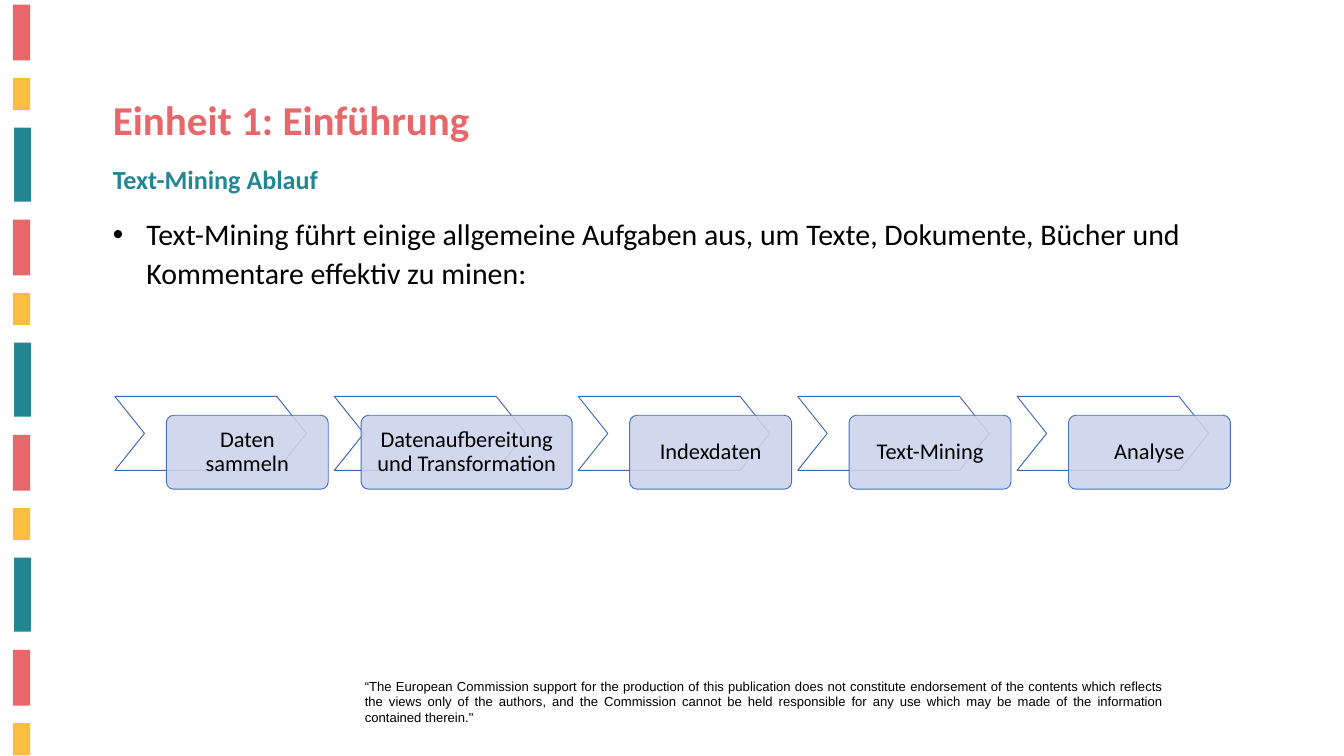
from lxml import etree
from pptx import Presentation
from pptx.dml.color import RGBColor
from pptx.enum.shapes import MSO_SHAPE
from pptx.enum.text import MSO_ANCHOR, MSO_AUTO_SIZE, PP_ALIGN
from pptx.oxml.ns import qn
from pptx.util import Inches, Pt

RECT, CHEVRON, ROUND = (MSO_SHAPE.RECTANGLE, MSO_SHAPE.CHEVRON,
                        MSO_SHAPE.ROUNDED_RECTANGLE)
LEFT, CENTER, JUSTIFY = PP_ALIGN.LEFT, PP_ALIGN.CENTER, PP_ALIGN.JUSTIFY
TOP, MIDDLE = MSO_ANCHOR.TOP, MSO_ANCHOR.MIDDLE
NO_FIT = MSO_AUTO_SIZE.NONE

CORAL = RGBColor(0xE8, 0x67, 0x6A)
ROSE = RGBColor(0xE7, 0x68, 0x6A)
AMBER = RGBColor(0xFD, 0xBD, 0x40)
TEAL = RGBColor(0x23, 0x87, 0x91)
BLACK = RGBColor(0, 0, 0)
WHITE = RGBColor(0xFF, 0xFF, 0xFF)
LILAC = RGBColor(0xCC, 0xD3, 0xEA)
BLUE = RGBColor(0x43, 0x72, 0xC3)
NAVY = RGBColor(0x3A, 0x66, 0xB1)

WIDE, HIGH = 20, 11.25


class Deck:
    font = "Calibri"

    def __init__(self):
        self.prs = Presentation()
        self.prs.slide_width = Inches(WIDE)
        self.prs.slide_height = Inches(HIGH)
        self.slide = self.prs.slides.add_slide(self.prs.slide_layouts[5])

    def set_text(self, shape, text, size, color=BLACK, bold=False, align=LEFT,
                 anchor=TOP, font=None, space=1.0):
        frame = shape.text_frame
        frame.word_wrap = True
        frame.auto_size = NO_FIT
        frame.vertical_anchor = anchor
        frame.text = text
        para = frame.paragraphs[0]
        para.alignment = align
        para.line_spacing = space
        style = para.runs[0].font
        style.name, style.size = font or self.font, Pt(size)
        style.bold, style.color.rgb = bold, color
        return para

    def title(self, box, text, size, color):
        shape = self.slide.shapes.title
        shape.left, shape.top, shape.width, shape.height = map(Inches, box)
        self.set_text(shape, text, size, color, bold=True)

    def label(self, box, text, size, **style):
        shape = self.slide.shapes.add_textbox(*map(Inches, box))
        return self.set_text(shape, text, size, **style)

    def bullet(self, box, text, size, **style):
        props = self.label(box, text, size, **style)._p.get_or_add_pPr()
        props.set("marL", str(Inches(0.5)))
        props.set("indent", str(Inches(-0.5)))
        etree.SubElement(props, qn("a:buFont"), typeface="Arial")
        etree.SubElement(props, qn("a:buChar"), char="•")

    def shape(self, kind, box, fill, line=None, adj=None, alpha=None):
        shape = self.slide.shapes.add_shape(kind, *map(Inches, box))
        shape.shadow.inherit = False
        shape.fill.solid()
        shape.fill.fore_color.rgb = fill
        if alpha is not None:
            tone = shape.fill._xPr.find(qn("a:solidFill"))[0]
            etree.SubElement(tone, qn("a:alpha"), val=str(alpha * 1000))
        if line is None:
            shape.line.fill.background()
        else:
            shape.line.color.rgb = line
            shape.line.width = Pt(1)
        if adj is not None:
            shape.adjustments[0] = adj
        return shape

    def step(self, left, width, text):
        """Draw a chevron with its card; return where the next step starts."""
        mid = left + 1.97
        self.shape(CHEVRON, (left, 5.9, 2.85, 1.1), WHITE, NAVY, adj=0.4)
        card = self.shape(ROUND, (mid - width / 2, 6.18, width, 1.1),
                          LILAC, BLUE, adj=0.1, alpha=89)
        frame = card.text_frame
        frame.margin_left = frame.margin_right = Inches(0.19)
        self.set_text(card, text, 24, align=CENTER, anchor=MIDDLE, space=0.9)
        return mid + width / 2 + 0.09


def main():
    deck = Deck()

    # Striped left edge
    bands = [(0.19, 0.07, 0.26, 0.83, CORAL),
             (0.19, 1.16, 0.26, 0.48, AMBER),
             (0.21, 1.9, 0.25, 1.1, TEAL)]
    for turn in range(4):
        for left, top, width, height, color in bands:
            top += turn * 3.2
            if top < HIGH:
                deck.shape(RECT, (left, top, width, height), color)

    # Headings and lead text
    deck.title((1.58, 1.35, 6.77, 0.84), "Einheit 1: Einführung", 44, ROSE)
    deck.label((1.58, 2.38, 10.98, 0.57), "Text-Mining Ablauf", 28,
               color=TEAL, bold=True)
    deck.bullet((1.58, 3.13, 18.25, 2.33),
                "Text-Mining führt einige allgemeine Aufgaben aus, um Texte, "
                "Dokumente, Bücher und Kommentare effektiv zu minen:",
                32, space=1.07)

    # Process steps
    steps = [("Daten sammeln", 2.41),
             ("Datenaufbereitung und Transformation", 3.14),
             ("Indexdaten", 2.41), ("Text-Mining", 2.41), ("Analyse", 2.41)]
    left = 1.71
    for text, width in steps:
        left = deck.step(left, width, text)

    # Disclaimer
    deck.label((5.33, 10.04, 12.08, 0.81),
               "“The European Commission support for the production of this "
               "publication does not constitute endorsement of the contents "
               "which reflects the views only of the authors, and the "
               "Commission cannot be held responsible for any use which may "
               "be made of the information contained therein.\"",
               14, align=JUSTIFY, font="Arial")

    deck.prs.save("out.pptx")


if __name__ == "__main__":
    main()
